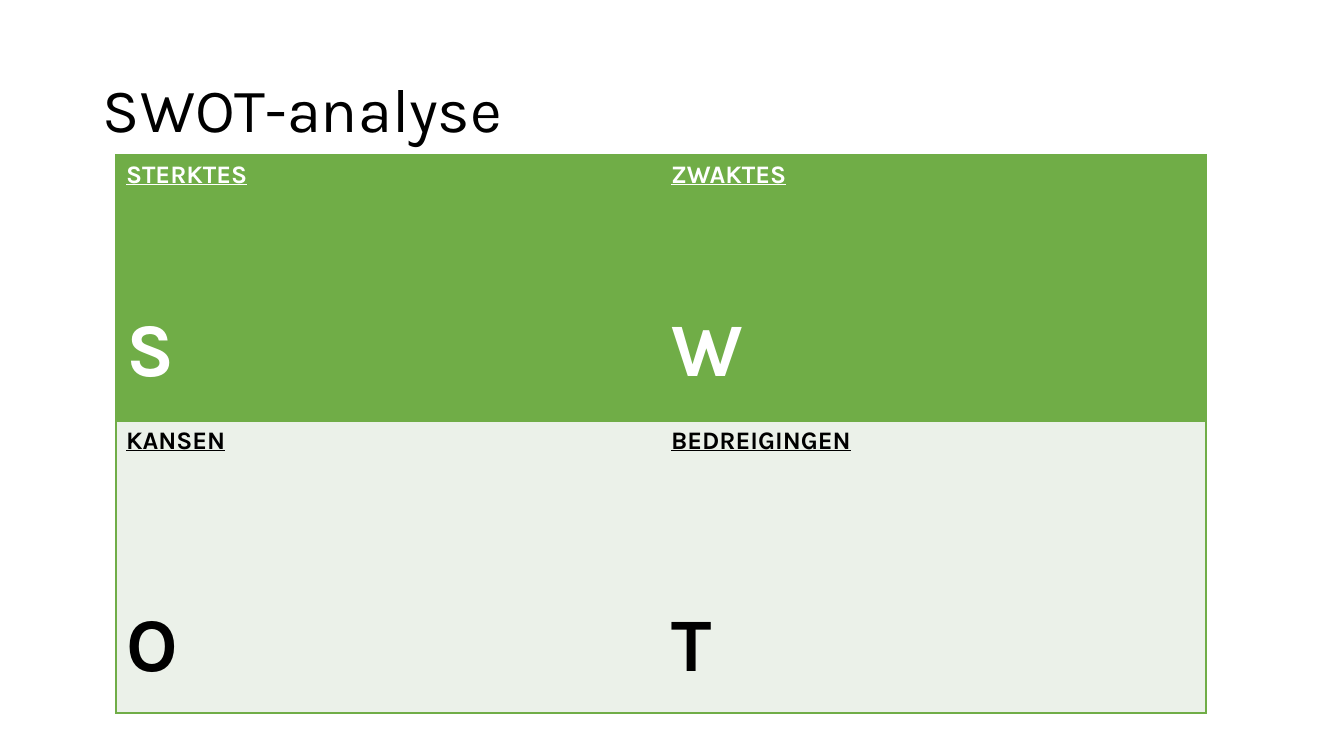
from lxml import etree
from pptx import Presentation
from pptx.dml.color import RGBColor
from pptx.enum.text import MSO_ANCHOR
from pptx.oxml.ns import qn
from pptx.util import Emu, Pt

MIDDLE = MSO_ANCHOR.MIDDLE
GREEN = RGBColor(0x70, 0xAD, 0x47)
PALE = RGBColor(0xEB, 0xF1, 0xE9)
WHITE = RGBColor(0xFF, 0xFF, 0xFF)
BLACK = RGBColor(0x00, 0x00, 0x00)
FONT = "Karla"
EMU_PER_PX = 914400 / 100.8

# Row height in px, fill, text colour, gap in points above the letter, cells
ROWS = [
    (266, GREEN, WHITE, 84, [("STERKTES", "S"), ("ZWAKTES", "W")]),
    (292, PALE, BLACK, 105, [("KANSEN", "O"), ("BEDREIGINGEN", "T")]),
]


def px(length):
    return Emu(round(length * EMU_PER_PX))


def style(para, size, color, bold=False, underline=False):
    font = para.runs[0].font
    font.name = FONT
    font.size = Pt(size)
    font.color.rgb = color
    font.bold = bold
    font.underline = underline


def add_title(page, left, top, width, height):
    box = page.shapes.add_textbox(px(left), px(top), px(width), px(height))
    frame = box.text_frame
    frame.word_wrap = True
    frame.vertical_anchor = MIDDLE
    frame.text = "SWOT-analyse"
    para = frame.paragraphs[0]
    para.line_spacing = 0.9
    style(para, 44, BLACK)


def set_borders(cell, outer_side):
    """Draw the top, bottom and outer side; leave the inner side open."""
    properties = cell._tc.get_or_add_tcPr()
    for position, side in enumerate(("lnL", "lnR", "lnT", "lnB")):
        line = etree.Element(qn("a:" + side), w=str(Pt(1)))
        if side in (outer_side, "lnT", "lnB"):
            fill = etree.SubElement(line, qn("a:solidFill"))
            etree.SubElement(fill, qn("a:srgbClr"), val=str(GREEN))
        else:
            etree.SubElement(line, qn("a:noFill"))
        properties.insert(position, line)


def fill_cell(cell, heading, letter, fill, color, gap):
    cell.fill.solid()
    cell.fill.fore_color.rgb = fill
    frame = cell.text_frame
    frame.text = heading
    style(frame.paragraphs[0], 18, color, bold=True, underline=True)
    para = frame.add_paragraph()
    para.text = letter
    para.space_before = Pt(gap)
    style(para, 54, color, bold=True)


def add_swot_table(page, left, top, width):
    height = sum(row[0] for row in ROWS)
    table = page.shapes.add_table(
        len(ROWS), 2, px(left), px(top), px(width), px(height)).table
    table.first_row = False
    table.horz_banding = False
    for column in table.columns:
        column.width = px(width // 2)
    for row, (row_height, fill, color, gap, entries) in enumerate(ROWS):
        table.rows[row].height = px(row_height)
        for column, (heading, letter) in enumerate(entries):
            cell = table.cell(row, column)
            fill_cell(cell, heading, letter, fill, color, gap)
            set_borders(cell, ("lnL", "lnR")[column])


def main():
    deck = Presentation()
    deck.slide_width = px(1344)
    deck.slide_height = px(756)
    page = deck.slides.add_slide(deck.slide_layouts[6])
    add_swot_table(page, 116, 155, 1090)
    add_title(page, 93, 40, 1159, 146)
    deck.save("out.pptx")


if __name__ == "__main__":
    main()
